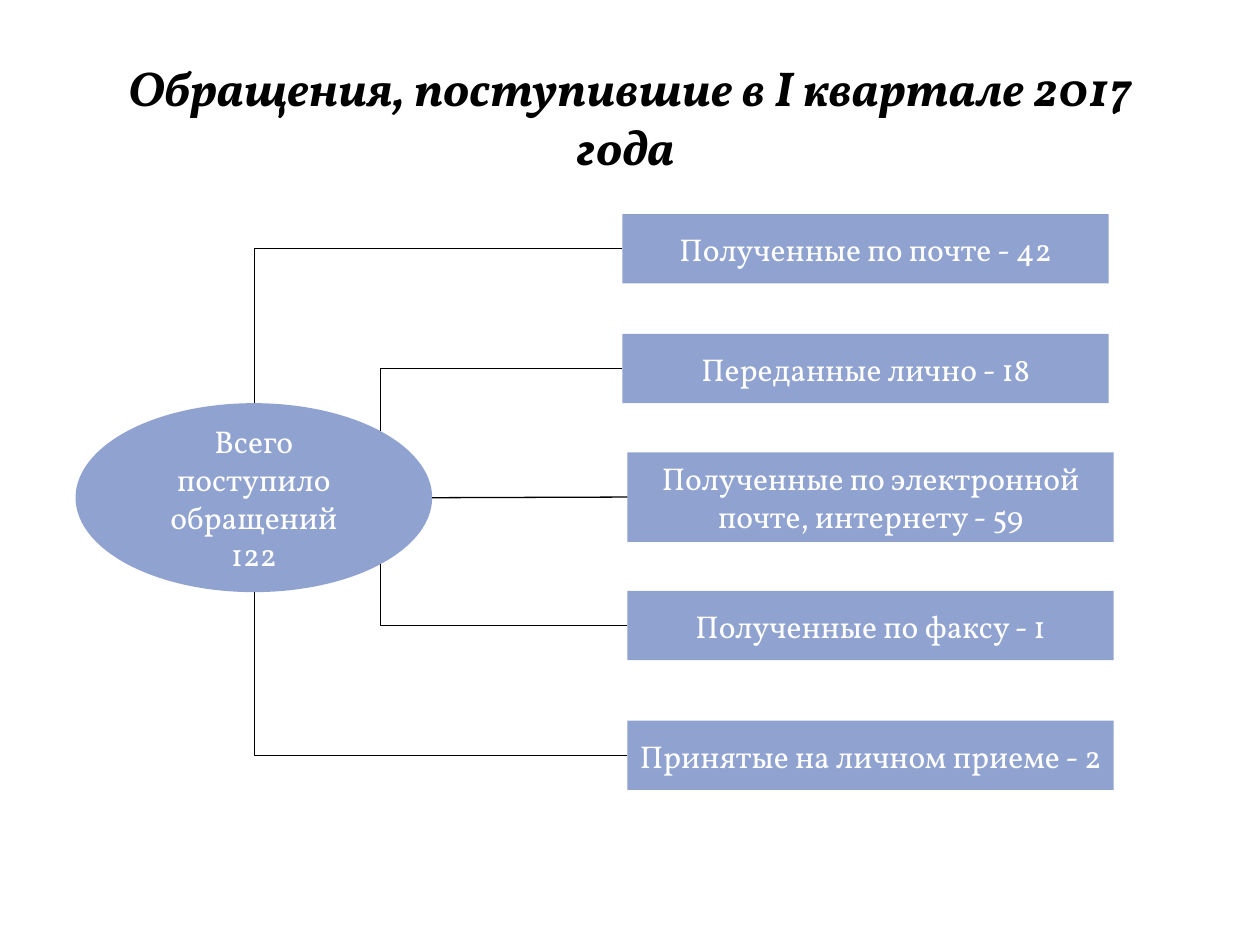
"""Build a slide showing how the appeals of a quarter were received."""
from lxml.etree import SubElement
from pptx import Presentation
from pptx.dml.color import RGBColor
from pptx.enum.shapes import MSO_CONNECTOR, MSO_SHAPE
from pptx.enum.text import MSO_ANCHOR, PP_ALIGN
from pptx.oxml.ns import qn
from pptx.util import Inches, Pt

BLUE = RGBColor(0x90, 0xA2, 0xCF)
WHITE = RGBColor(0xFF, 0xFF, 0xFF)
BLACK = RGBColor(0x00, 0x00, 0x00)
FONT = "Vollkorn"


def write(text_frame, lines, size, color, emphasis=False):
    text_frame.word_wrap = True
    text_frame.vertical_anchor = MSO_ANCHOR.MIDDLE
    for index, line in enumerate(lines):
        paragraph = text_frame.add_paragraph() if index else text_frame.paragraphs[0]
        paragraph.alignment = PP_ALIGN.CENTER
        run = paragraph.add_run()
        run.text = line
        run.font.name = FONT
        run.font.size = Pt(size)
        run.font.bold = run.font.italic = emphasis
        run.font.color.rgb = color


def add_node(slide, kind, left, top, width, height, lines):
    shape = slide.shapes.add_shape(
        kind, Inches(left), Inches(top), Inches(width), Inches(height)
    )
    shape.shadow.inherit = False
    shape.fill.solid()
    shape.fill.fore_color.rgb = BLUE
    shape.line.fill.background()
    write(shape.text_frame, lines, 18, WHITE)
    return shape


presentation = Presentation()
presentation.slide_width = Inches(10)
presentation.slide_height = Inches(7.5)
slide = presentation.slides.add_slide(presentation.slide_layouts[5])

title = slide.shapes.title
title.left, title.top = Inches(0.5), Inches(0.3)
title.width, title.height = Inches(9), Inches(1.25)
write(title.text_frame, ["Обращения, поступившие в I квартале 2017 года "], 28, BLACK, True)

total = add_node(
    slide, MSO_SHAPE.OVAL, 0.6, 3.2, 2.83, 1.5, ["Всего поступило обращений", "122"]
)

channels = [
    ("Полученные по почте - 42", 4.94, 1.7, 0.55, 0, 2.02, 3.2),
    ("Переданные лично - 18", 4.94, 2.65, 0.55, 7, 3.02, 3.42),
    ("Полученные по электронной почте, интернету - 59", 4.98, 3.59, 0.71, 6, 3.43, 3.95),
    ("Полученные по факсу - 1", 4.98, 4.69, 0.55, 5, 3.02, 4.48),
    ("Принятые на личном приеме - 2", 4.98, 5.72, 0.55, 4, 2.02, 4.7),
]

for label, left, top, height, site, end_x, end_y in channels:
    box = add_node(slide, MSO_SHAPE.RECTANGLE, left, top, 3.86, height, [label])
    straight = site == 6
    connector = slide.shapes.add_connector(
        MSO_CONNECTOR.STRAIGHT if straight else MSO_CONNECTOR.ELBOW,
        Inches(left), Inches(top + height / 2), Inches(end_x), Inches(end_y),
    )
    connector.begin_connect(box, 1)
    connector.line.color.rgb = BLACK
    connector.line.width = Pt(0.75)
    element = connector._element
    SubElement(element.spPr, qn("a:effectLst"))
    links = element.find(".//" + qn("p:cNvCxnSpPr"))
    SubElement(links, qn("a:endCxn"), id=str(total.shape_id), idx=str(site))
    if not straight:
        element.find(".//" + qn("a:prstGeom")).set("prst", "bentConnector2")

presentation.save("out.pptx")
